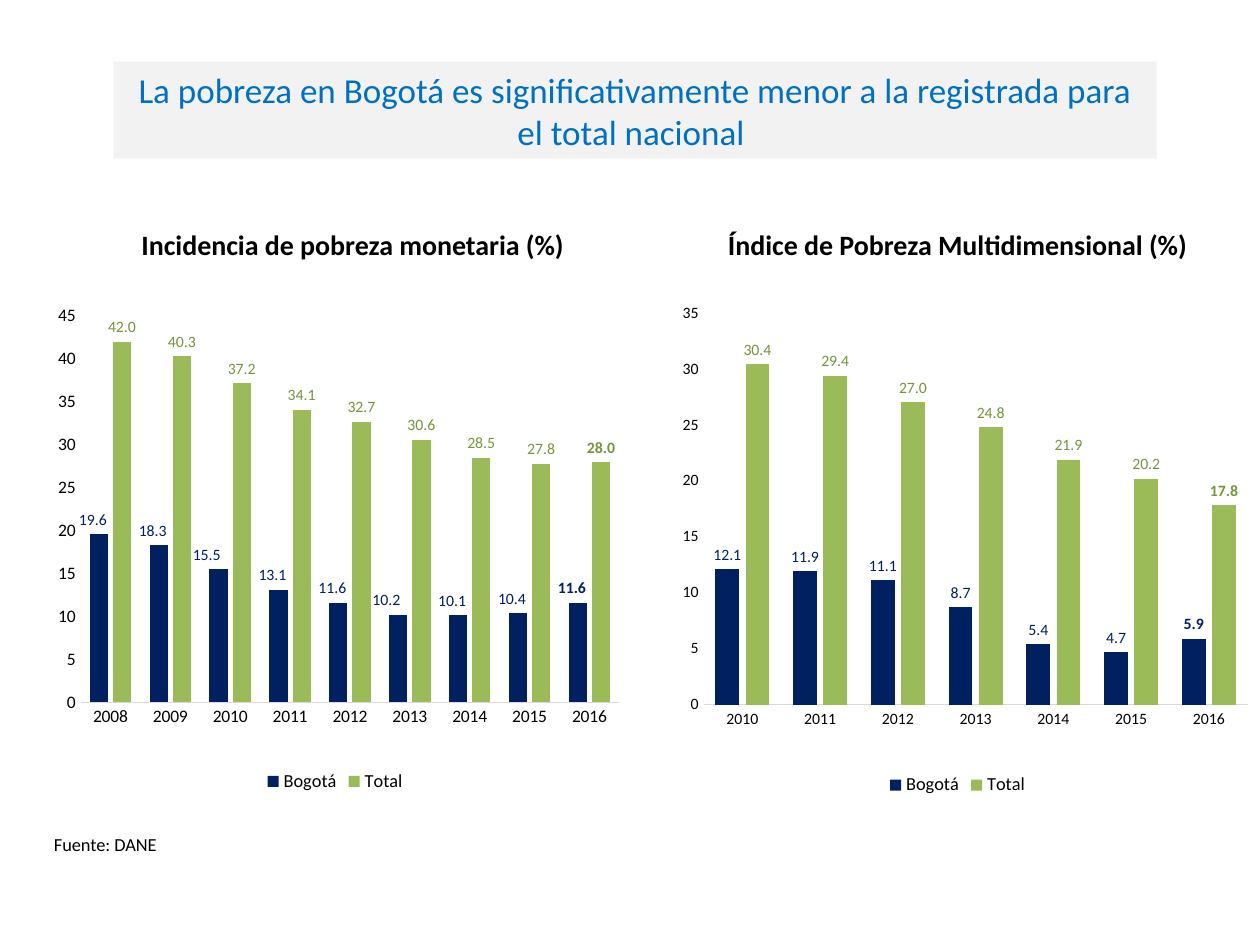
import pptx
import pptx.chart.data
import pptx.dml.color
import pptx.enum.chart
import pptx.enum.shapes
import pptx.enum.text
import pptx.oxml
import pptx.oxml.ns
import pptx.util

Inches = pptx.util.Inches
qn = pptx.oxml.ns.qn
rgb = pptx.dml.color.RGBColor.from_string

THEME = {
    "font": "Calibri", "ink": "000000", "white": "FFFFFF", "band": "F2F2F2",
    "title": "0070C0", "axis": "D9D9D9",
    "bars": ["002060", "9BBB59"], "labels": ["002060", "77933C"],
    "title_pt": 20, "head_pt": 16, "note_pt": 10.5, "label_pt": 9,
}


def style(font, size, color, bold=False):
    font.name = THEME["font"]
    font.size = pptx.util.Pt(size)
    font.bold = bold
    font.color.rgb = rgb(color)


def layout(x, y, size=None):
    """Manual chart layout: a label offset, or an inner plot area with a size."""
    tags = [("x", x), ("y", y)]
    if size:
        tags = [("layoutTarget", "inner"), ("xMode", "edge"), ("yMode", "edge"),
                *tags, ("w", size[0]), ("h", size[1])]
    body = "".join(f'<c:{tag} val="{val}"/>' for tag, val in tags)
    return pptx.oxml.parse_xml(
        f'<c:layout {pptx.oxml.ns.nsdecls("c")}><c:manualLayout>{body}'
        "</c:manualLayout></c:layout>")


deck = pptx.Presentation()
deck.slide_width, deck.slide_height = Inches(10), Inches(7.5)
slide = deck.slides.add_slide(deck.slide_layouts[6])

# Charts: shifts move the Bogotá labels as fractions of the chart size
panels = [
    {"head": "Incidencia de pobreza monetaria (%)", "left": 0.56,
     "box": (0.31, 2.13, 4.7, 4.2), "plot": (0.07, 0.09, (0.91, 0.73)),
     "start": 2008, "top": 45, "axis_pt": 10,
     "rows": [("Bogotá", [19.6, 18.3, 15.5, 13.1, 11.6, 10.2, 10.1, 10.4, 11.6]),
              ("Total", [42, 40.3, 37.2, 34.1, 32.7, 30.6, 28.5, 27.8, 28])],
     "shifts": [-0.01, -0.01, -0.02, -0.01, -0.01, -0.02, -0.01, -0.01, -0.01]},
    {"head": "Índice de Pobreza Multidimensional (%)", "left": 5.36,
     "box": (5.2, 2.1, 4.8, 4.26), "plot": (0.08, 0.09, (0.9, 0.73)),
     "start": 2010, "top": 35, "axis_pt": 9,
     "rows": [("Bogotá", [12.1, 11.9, 11.1, 8.7, 5.4, 4.7, 5.9]),
              ("Total", [30.4, 29.4, 27, 24.8, 21.9, 20.2, 17.8])],
     "shifts": []},
]
for panel in panels:
    data = pptx.chart.data.CategoryChartData(number_format="0.0")
    data.categories = [str(year) for year in range(panel["start"], 2017)]
    for name, vals in panel["rows"]:
        data.add_series(name, vals)
    chart = slide.shapes.add_chart(
        pptx.enum.chart.XL_CHART_TYPE.COLUMN_CLUSTERED,
        *map(Inches, panel["box"]), data).chart
    chart.has_title = False
    style(chart.font, 10, THEME["ink"])
    chart.has_legend = True
    chart.legend.position = pptx.enum.chart.XL_LEGEND_POSITION.BOTTOM
    chart.legend.include_in_layout = False
    style(chart.legend.font, THEME["note_pt"], THEME["ink"])

    # Plot area and axes
    area = chart.element.find(".//" + qn("c:plotArea"))
    for old in area.findall(qn("c:layout")):
        area.remove(old)
    area.insert(0, layout(*panel["plot"]))
    for axis in (chart.category_axis, chart.value_axis):
        axis.major_tick_mark = pptx.enum.chart.XL_TICK_MARK.NONE
        axis.has_major_gridlines = False
        style(axis.tick_labels.font, panel["axis_pt"], THEME["ink"])
    line = chart.category_axis.format.line
    line.color.rgb = rgb(THEME["axis"])
    line.width = pptx.util.Pt(0.75)
    scale = chart.value_axis
    scale.format.line.fill.background()
    scale.minimum_scale, scale.maximum_scale, scale.major_unit = 0, panel["top"], 5
    scale.tick_labels.number_format = "0"
    scale.tick_labels.number_format_is_linked = False

    # Bars and value labels, the last year in bold
    plot = chart.plots[0]
    plot.gap_width, plot.overlap, plot.vary_by_categories = 100, -27, False
    for bars, fill, color in zip(plot.series, THEME["bars"], THEME["labels"]):
        bars.format.fill.solid()
        bars.format.fill.fore_color.rgb = rgb(fill)
        marks = bars.data_labels
        marks.show_value = True
        marks.number_format = "#,##0.0"
        marks.number_format_is_linked = False
        marks.position = pptx.enum.chart.XL_LABEL_POSITION.OUTSIDE_END
        style(marks.font, THEME["label_pt"], color)
        last = len(data.categories) - 1
        shifts = panel["shifts"] if bars.name == "Bogotá" else []
        for spot in range(last + 1) if shifts else [last]:
            mark = bars.points[spot].data_label
            style(mark.font, THEME["label_pt"], color, spot == last)
            mark.position = pptx.enum.chart.XL_LABEL_POSITION.OUTSIDE_END
    for mark in chart.element.iter(qn("c:dLbl")):
        mark.insert(1, pptx.oxml.parse_xml(
            f'<c:numFmt {pptx.oxml.ns.nsdecls("c")} '
            'formatCode="#,##0.0" sourceLinked="0"/>'))
    first = chart.element.find(".//" + qn("c:ser"))
    for mark, shift in zip(first.iter(qn("c:dLbl")), panel["shifts"]):
        mark.insert(1, layout(shift, 0))

# Chart headings, source note and title band
align = pptx.enum.text.PP_ALIGN
texts = [(panel["head"], (panel["left"], 1.76, 4.48, 0.37), None,
          THEME["head_pt"], THEME["ink"], True, align.CENTER) for panel in panels]
texts += [
    ("Fuente: DANE", (0.33, 6.55, 1.22, 0.3), THEME["white"],
     THEME["note_pt"], THEME["ink"], False, align.LEFT),
    ("La pobreza en Bogotá es significativamente menor a la registrada para "
     "el total nacional ", (0.9, 0.49, 8.28, 0.77), THEME["band"],
     THEME["title_pt"], THEME["title"], False, align.CENTER),
]
for text, box, fill, size, color, bold, side in texts:
    place = [Inches(num) for num in box]
    if fill:
        shape = slide.shapes.add_shape(
            pptx.enum.shapes.MSO_SHAPE.RECTANGLE, *place)
        shape.shadow.inherit = False
        shape.fill.solid()
        shape.fill.fore_color.rgb = rgb(fill)
        shape.line.fill.background()
    else:
        shape = slide.shapes.add_textbox(*place)
    frame = shape.text_frame
    frame.word_wrap = True
    frame.text = text
    anchor = pptx.enum.text.MSO_ANCHOR
    frame.vertical_anchor = anchor.MIDDLE if fill else anchor.TOP
    para = frame.paragraphs[0]
    para.alignment = side
    style(para.runs[0].font, size, color, bold)

deck.save("out.pptx")
